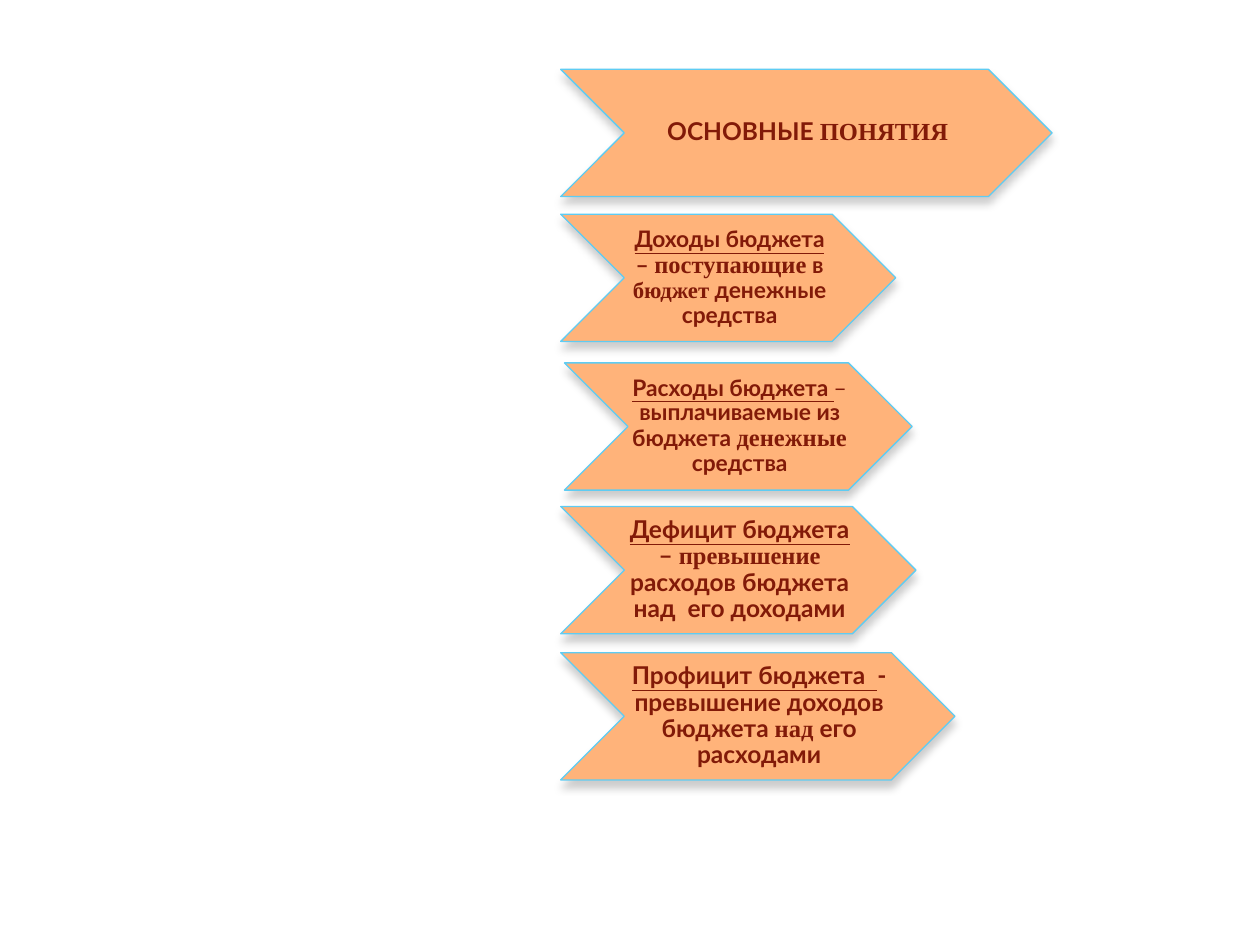
from lxml.etree import SubElement
from pptx import Presentation
from pptx.dml.color import RGBColor
from pptx.enum.shapes import MSO_SHAPE as Shape
from pptx.enum.text import MSO_ANCHOR as Anchor, PP_ALIGN as Align
from pptx.oxml.ns import qn
from pptx.util import Inches, Pt

COLORS = {"fill": "FFB37A", "line": "5ECCF3", "text": "821A08", "shadow": "000000"}
SANS, SERIF = "Lato", "Times New Roman"
LEFT, HEIGHT = 4.45, 1.01
TIP = HEIGHT / 2

# Each arrow: left, top, width, spans; each span: text, font, size, bold, underline
ARROWS = [
    (LEFT, 0.55, 3.9, [
        ("ОСНОВНЫЕ ", SANS, 14, True, False),
        ("ПОНЯТИЯ", SERIF, 14, True, False)]),
    (LEFT, 1.7, 2.66, [
        ("Доходы бюджета ", SANS, 13, True, True),
        ("– ", SANS, 13, True, False),
        ("поступающие", SERIF, 14, True, False),
        (" в ", SANS, 13, True, False),
        ("бюджет", SERIF, 13, True, False),
        (" денежные средства", SANS, 13, True, False)]),
    (LEFT + 0.03, 2.88, 2.76, [
        ("Расходы бюджета ", SANS, 13, True, True),
        ("– ", SANS, 13, False, False),
        ("выплачиваемые из бюджета ", SANS, 13, True, False),
        ("денежные", SERIF, 14, True, False),
        (" средства", SANS, 13, True, False)]),
    (LEFT, 4.02, 2.82, [
        ("Дефицит бюджета ", SANS, 14, True, True),
        ("– ", SANS, 14, True, False),
        ("превышение", SERIF, 14, True, False),
        (" расходов бюджета над  его доходами", SANS, 14, True, False)]),
    (LEFT, 5.18, 3.13, [
        ("Профицит бюджета  ", SANS, 14, True, True),
        ("- превышение доходов бюджета ", SANS, 14, True, False),
        ("над", SERIF, 14, True, False),
        (" его расходами", SANS, 14, True, False)]),
]


def color(name):
    return RGBColor.from_string(COLORS[name])


def add_drop_shadow(shape):
    shape.shadow.inherit = False
    effects = shape._element.spPr.find(qn("a:effectLst"))
    outer = SubElement(effects, qn("a:outerShdw"), blurRad=str(Pt(5)),
                       dist=str(Pt(4)), dir="5400000", rotWithShape="0")
    tint = SubElement(outer, qn("a:srgbClr"), val=COLORS["shadow"])
    SubElement(tint, qn("a:alpha"), val="20000")


def add_chevron(slide, left, top, width):
    chevron = slide.shapes.add_shape(
        Shape.CHEVRON, Inches(left), Inches(top), Inches(width), Inches(HEIGHT))
    chevron.fill.solid()
    chevron.fill.fore_color.rgb = color("fill")
    chevron.line.color.rgb = color("line")
    chevron.line.width = Pt(0.75)
    add_drop_shadow(chevron)


def add_label(slide, left, top, width, spans):
    box = slide.shapes.add_textbox(
        Inches(left), Inches(top), Inches(width), Inches(HEIGHT))
    frame = box.text_frame
    frame.word_wrap = True
    frame.vertical_anchor = Anchor.MIDDLE
    frame.margin_left = Inches(0.02)
    frame.margin_top = frame.margin_bottom = Inches(0.01)
    frame.margin_right = 0
    para = frame.paragraphs[0]
    para.alignment = Align.CENTER
    para.line_spacing = 0.9
    for text, font, size, bold, underline in spans:
        span = para.add_run()
        span.text = text
        span.font.name = font
        span.font.size = Pt(size)
        span.font.bold = bold
        span.font.underline = underline
        span.font.color.rgb = color("text")


def main():
    deck = Presentation()
    deck.slide_width, deck.slide_height = Inches(10), Inches(7.5)
    slide = deck.slides.add_slide(deck.slide_layouts[6])
    for left, top, width, spans in ARROWS:
        add_chevron(slide, left, top, width)
        add_label(slide, left + TIP, top, width - 2 * TIP, spans)
    deck.save("out.pptx")


if __name__ == "__main__":
    main()
